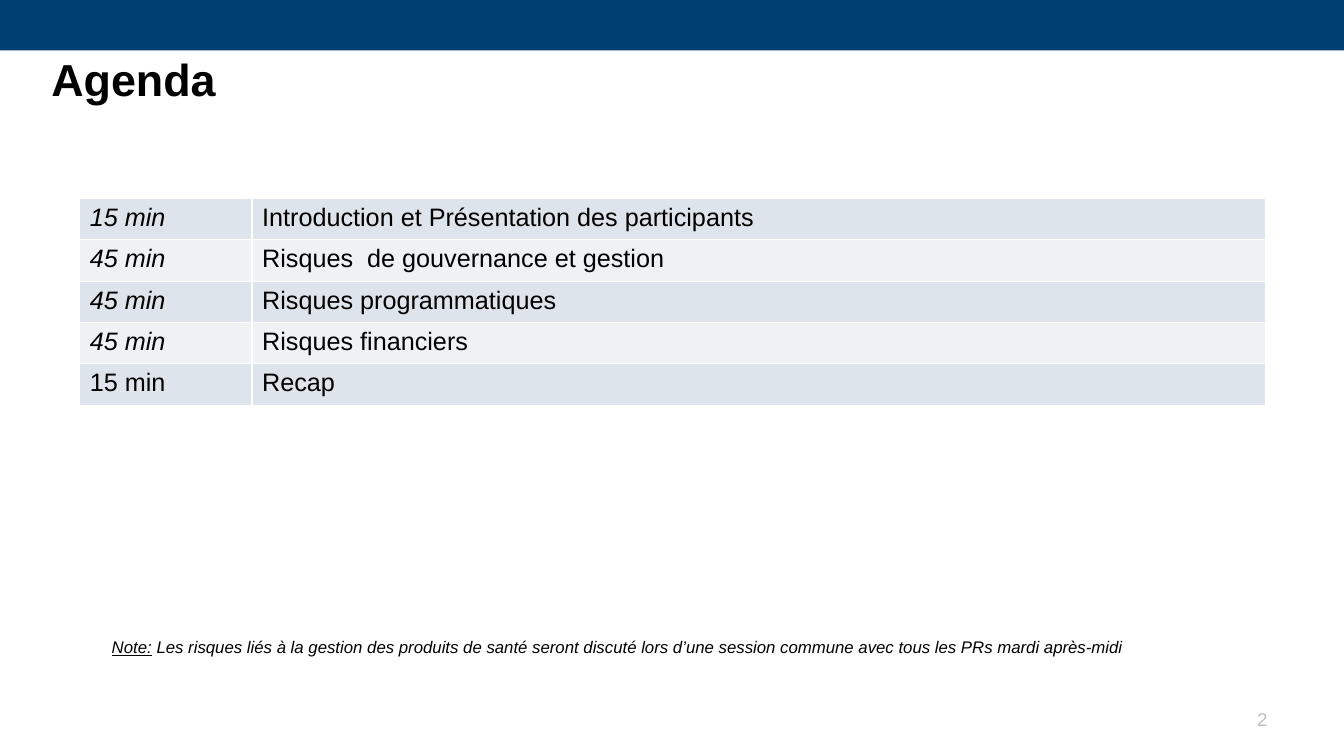
import pptx
import pptx.util
import pptx.dml.color
import pptx.enum.shapes
import pptx.enum.text
import pptx.oxml

Inches = pptx.util.Inches
Pt = pptx.util.Pt
RGB = pptx.dml.color.RGBColor
ALIGN = pptx.enum.text.PP_ALIGN
ANCHOR = pptx.enum.text.MSO_ANCHOR

NAVY = RGB(0x00, 0x3F, 0x72)
BLACK = RGB(0x00, 0x00, 0x00)
GREY = RGB(0xBF, 0xBF, 0xBF)
BANDS = [RGB(0xDE, 0xE4, 0xEB), RGB(0xEF, 0xF2, 0xF5)]
NS = "http://schemas.openxmlformats.org/drawingml/2006/main"


def write(para, text, size, color=BLACK, bold=False, slant=False, under=False):
    run = para.add_run()
    run.text = text
    font = run.font
    font.name = "Arial"
    font.size = Pt(size)
    font.color.rgb = color
    font.bold = bold
    font.italic = slant
    font.underline = under


def add_box(left, top, width, height):
    box = slide.shapes.add_textbox(Inches(left), Inches(top), Inches(width), Inches(height))
    box.text_frame.word_wrap = True
    return box.text_frame


deck = pptx.Presentation()
deck.slide_width = Inches(13.33)
deck.slide_height = Inches(7.5)
slide = deck.slides.add_slide(deck.slide_layouts[6])

band = slide.shapes.add_shape(
    pptx.enum.shapes.MSO_SHAPE.RECTANGLE, 0, 0, deck.slide_width, Inches(0.5))
band.shadow.inherit = False
band.fill.solid()
band.fill.fore_color.rgb = NAVY
band.line.fill.background()

title = add_box(0.51, 0.51, 11.76, 0.62)
title.margin_left = title.margin_right = title.margin_top = 0
write(title.paragraphs[0], "Agenda", 32, bold=True)

page = add_box(9.56, 6.93, 3.11, 0.4)
page.vertical_anchor = ANCHOR.MIDDLE
page.paragraphs[0].alignment = ALIGN.RIGHT
write(page.paragraphs[0], "2", 13.3, GREY)

agenda = [
    ("15 min", "Introduction et Présentation des participants", True),
    ("45 min", "Risques  de gouvernance et gestion", True),
    ("45 min", "Risques programmatiques", True),
    ("45 min", "Risques financiers", True),
    ("15 min", "Recap", False),
]
widths = [1.71, 10.05]
pitch = 0.41
table = slide.shapes.add_table(
    len(agenda), len(widths), Inches(0.79), Inches(1.97),
    Inches(sum(widths)), Inches(pitch * len(agenda))).table
for col, width in zip(table.columns, widths):
    col.width = Inches(width)

for i, (time, topic, slant) in enumerate(agenda):
    table.rows[i].height = Inches(pitch)
    for j, text in enumerate([time, topic]):
        cell = table.cell(i, j)
        write(cell.text_frame.paragraphs[0], text, 18, slant=slant and j == 0)
        props = cell._tc.get_or_add_tcPr()
        for side in ("lnL", "lnR", "lnT", "lnB"):
            props.append(pptx.oxml.parse_xml(
                f'<a:{side} xmlns:a="{NS}" w="12700"><a:solidFill>'
                f'<a:srgbClr val="FFFFFF"/></a:solidFill></a:{side}>'))
        cell.fill.solid()
        cell.fill.fore_color.rgb = BANDS[i % 2]

note = add_box(1.01, 6.27, 11.66, 0.3)
note.auto_size = pptx.enum.text.MSO_AUTO_SIZE.SHAPE_TO_FIT_TEXT
write(note.paragraphs[0], "Note:", 12, slant=True, under=True)
write(note.paragraphs[0],
      " Les risques liés à la gestion des produits de santé seront discuté lors "
      "d’une session commune avec tous les PRs mardi après-midi", 12, slant=True)

deck.save("out.pptx")
